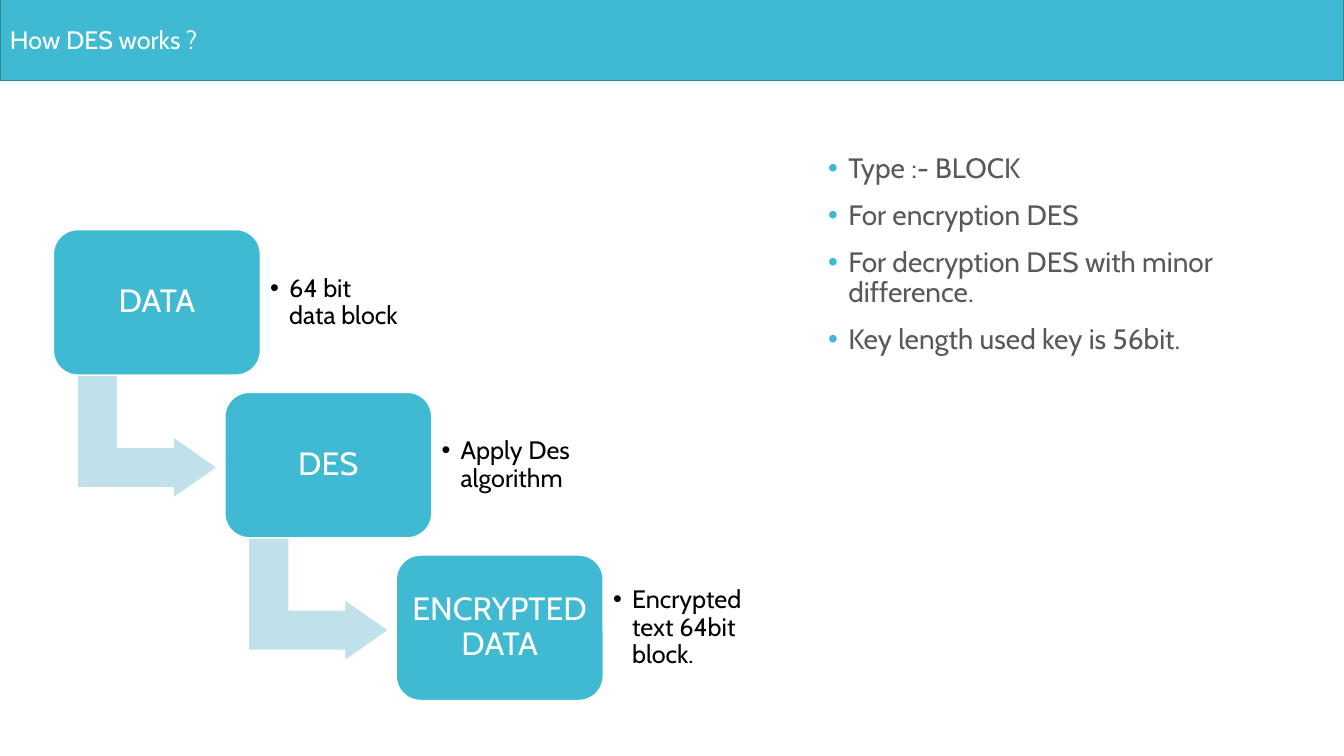
from lxml import etree
from pptx import Presentation
from pptx import util as u
from pptx.dml.color import RGBColor
from pptx.enum import shapes, text
from pptx.oxml import ns

FONT = "Cabin"
TEAL = "40BAD2"
PALE_TEAL = "C0E0EA"
DARK_TEAL = "2F8A9B"
WHITE = "FFFFFF"
BLACK = "000000"
GREY = "595959"

STEPS = [
    ("DATA", "64 bit data block"),
    ("DES", "Apply Des algorithm"),
    ("ENCRYPTED DATA", "Encrypted text 64bit block."),
]
FACTS = [
    "Type :- BLOCK",
    "For encryption DES",
    "For decryption DES with minor difference.",
    "Key length used key is 56bit.",
]
FIRST_LEFT, FIRST_TOP = 1.35, 5.79
STEP_RIGHT, STEP_DOWN = 4.32, 4.1
BOX_WIDTH, BOX_HEIGHT = 5.21, 3.66


def color(hex_string):
    return RGBColor.from_string(hex_string)


def frame(left, top, width, height):
    return [u.Cm(value) for value in (left, top, width, height)]


def paint(shape, fill, line):
    shape.fill.solid()
    shape.fill.fore_color.rgb = color(fill)
    shape.line.color.rgb = color(line)
    shape.line.width = u.Pt(0.85)
    shape.shadow.inherit = False


def add_bullet(paragraph, indent, bullet_color):
    properties = paragraph._p.get_or_add_pPr()
    properties.set("marL", str(u.Cm(indent)))
    properties.set("indent", str(-u.Cm(indent)))
    bullet = etree.SubElement(properties, ns.qn("a:buClr"))
    etree.SubElement(bullet, ns.qn("a:srgbClr"), val=bullet_color)
    etree.SubElement(properties, ns.qn("a:buFont"), typeface="Arial")
    etree.SubElement(properties, ns.qn("a:buChar"), char="•")


def write(shape, lines, size, hex_color, align=text.PP_ALIGN.LEFT,
          anchor=text.MSO_ANCHOR.MIDDLE, margins=(0.25, 0.13), spacing=0.9,
          before=0, indent=0, bullet_color=None):
    text_frame = shape.text_frame
    text_frame.word_wrap = True
    text_frame.auto_size = text.MSO_AUTO_SIZE.NONE
    text_frame.vertical_anchor = anchor
    text_frame.margin_left = text_frame.margin_right = u.Cm(margins[0])
    text_frame.margin_top = text_frame.margin_bottom = u.Cm(margins[1])
    text_frame.text = "\n".join(lines)
    for paragraph in text_frame.paragraphs:
        paragraph.alignment = align
        paragraph.line_spacing = spacing
        paragraph.space_before = u.Pt(before)
        if bullet_color:
            add_bullet(paragraph, indent, bullet_color)
        for run in paragraph.runs:
            run.font.name = FONT
            run.font.size = u.Pt(size)
            run.font.color.rgb = color(hex_color)


def add_title(slide, title):
    shape = slide.shapes.title
    shape.left, shape.top, shape.width, shape.height = frame(0, -0.05, 33.87, 2.08)
    paint(shape, TEAL, DARK_TEAL)
    write(shape, [title], 18, WHITE, spacing=1.0)


def add_arrow(slide, left, top):
    arrow = slide.shapes.add_shape(
        shapes.MSO_SHAPE.BENT_UP_ARROW, *frame(left + 0.81, top + 3.45, 3.1, 3.53))
    arrow.rotation = 90
    for index, value in enumerate((0.328, 0.25, 0.358)):
        arrow.adjustments[index] = value
    paint(arrow, PALE_TEAL, WHITE)


def add_step(slide, left, top, name, detail):
    box = slide.shapes.add_shape(
        shapes.MSO_SHAPE.ROUNDED_RECTANGLE, *frame(left, top, BOX_WIDTH, BOX_HEIGHT))
    paint(box, TEAL, WHITE)
    write(box, [name], 23, WHITE, align=text.PP_ALIGN.CENTER, margins=(0.05, 0.05))
    note = slide.shapes.add_textbox(*frame(left + BOX_WIDTH, top + 0.36, 3.78, 2.95))
    write(note, [detail], 18, BLACK, margins=(0.25, 0.25), indent=0.48,
          bullet_color=BLACK)


def add_facts(slide):
    box = slide.shapes.add_textbox(*frame(20.62, 3.76, 11.89, 5.38))
    write(box, FACTS, 20, GREY, anchor=text.MSO_ANCHOR.TOP, before=12,
          indent=0.51, bullet_color=TEAL)


def main():
    presentation = Presentation()
    presentation.slide_width = u.Cm(33.87)
    presentation.slide_height = u.Cm(19.05)
    slide = presentation.slides.add_slide(presentation.slide_layouts.get_by_name("Title Only"))
    add_title(slide, "How DES works ?")
    for index, (name, detail) in enumerate(STEPS):
        left = FIRST_LEFT + index * STEP_RIGHT
        top = FIRST_TOP + index * STEP_DOWN
        if index < len(STEPS) - 1:
            add_arrow(slide, left, top)
        add_step(slide, left, top, name, detail)
    add_facts(slide)
    presentation.save("out.pptx")


if __name__ == "__main__":
    main()
